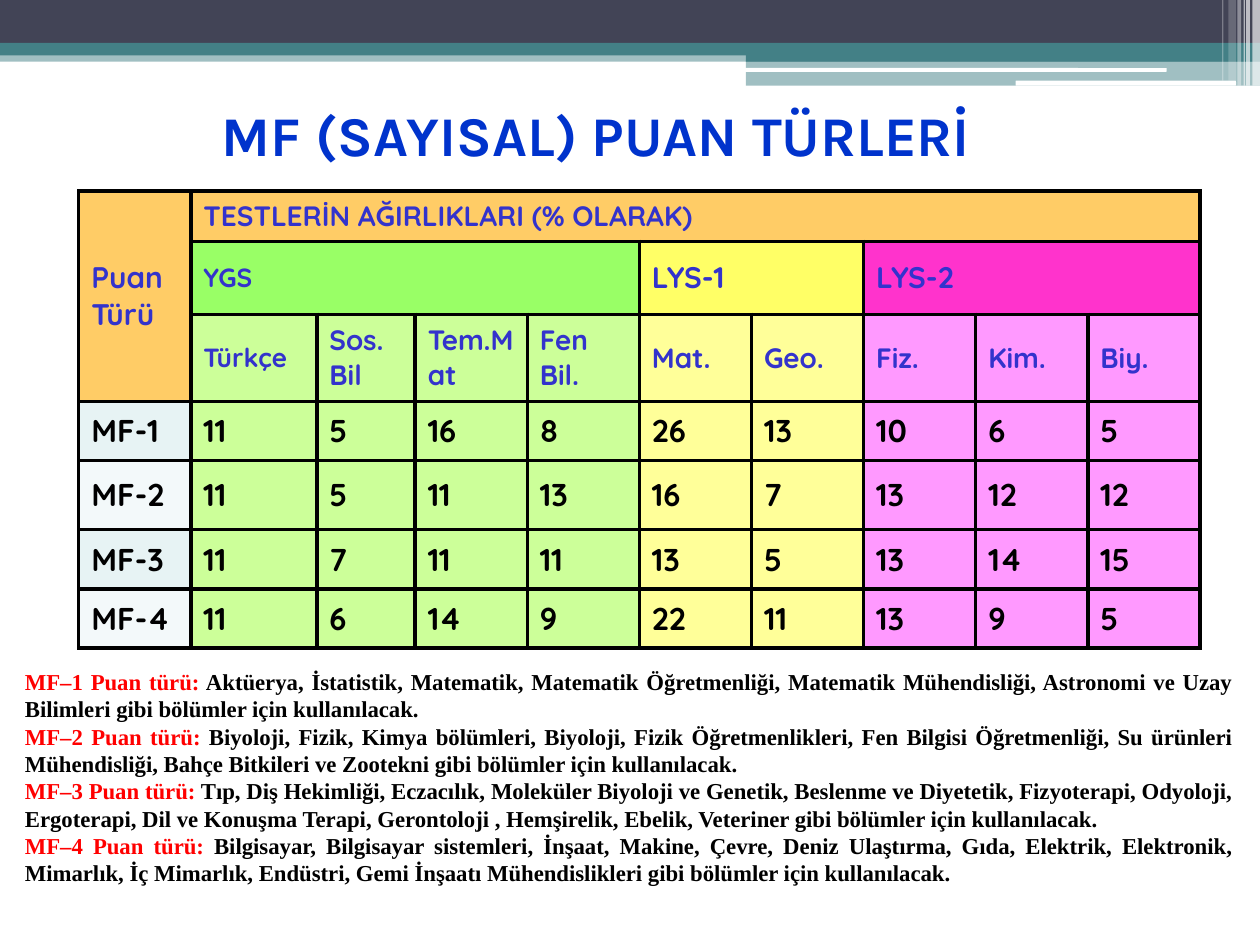
from dataclasses import dataclass

from lxml import etree
from pptx import Presentation, util as u
from pptx.dml.color import RGBColor
from pptx.enum import shapes, text
from pptx.oxml.ns import qn

COLUMNS, ROWS = 1000, 750


@dataclass(frozen=True)
class Theme:
    """Colours, fonts and type sizes of the slide."""
    white: str = "FFFFFF"
    black: str = "000000"
    navy: str = "424456"
    teal: str = "438086"
    title: str = "0033CC"
    heading: str = "3333CC"
    label: str = "FF0000"
    orange: str = "FFCC66"
    ygs: str = "99FF66"
    ygs_light: str = "CCFF99"
    lys1: str = "FFFF66"
    lys1_light: str = "FFFF99"
    lys2: str = "FF33CC"
    lys2_light: str = "FF99FF"
    bands: tuple = ("E7F3F4", "F3F9FA")
    title_font: str = "Karla"
    table_font: str = "Quicksand"
    note_font: str = "Times New Roman"
    title_size: float = 32
    score_size: float = 18
    group_size: float = 17
    head_size: float = 16
    small_size: float = 15
    note_size: float = 13
    border: float = 2.25


THEME = Theme()

BARS = [
    ((0, 40, 1000, 9), THEME.teal, 50),
    ((0, 0, 1000, 34), THEME.navy, 100),
    ((0, 34, 1000, 10), THEME.teal, 100),
    ((592, 39, 408, 10), THEME.teal, 100),
    ((592, 48, 408, 20), THEME.teal, 50),
]
PILLS = [(591, 54, 335, 3), (806, 64, 175, 4)]
STRIPES = [(994, 6, 68, 65), (989, 3, 68, 65), (987, 1, 68, 60),
           (982, 3, 68, 40), (975, 6, 64, 20), (970, 1, 64, 30)]

COLUMN_WIDTHS = [89, 100, 78] + [89] * 7
ROW_HEIGHTS = [40, 58, 69, 47, 55, 47, 47]
GROUPS = [
    ("YGS", 1, 4, THEME.ygs, THEME.small_size),
    ("LYS-1", 5, 6, THEME.lys1, THEME.group_size),
    ("LYS-2", 7, 9, THEME.lys2, THEME.group_size),
]
TESTS = ["Türkçe", "Sos.\nBil", "Tem.Mat", "Fen Bil.", "Mat.", "Geo.", "Fiz.", "Kim.", "Biy."]
TEST_FILLS = [THEME.ygs_light] * 4 + [THEME.lys1_light] * 2 + [THEME.lys2_light] * 3
SCORES = {
    "MF-1": [11, 5, 16, 8, 26, 13, 10, 6, 5],
    "MF-2": [11, 5, 11, 13, 16, 7, 13, 12, 12],
    "MF-3": [11, 7, 11, 11, 13, 5, 13, 14, 15],
    "MF-4": [11, 6, 14, 9, 22, 11, 13, 9, 5],
}
NOTES = [
    "Aktüerya, İstatistik, Matematik, Matematik Öğretmenliği, Matematik Mühendisliği, "
    "Astronomi ve Uzay Bilimleri gibi bölümler için kullanılacak.",
    "Biyoloji, Fizik, Kimya bölümleri, Biyoloji, Fizik Öğretmenlikleri, Fen Bilgisi "
    "Öğretmenliği, Su ürünleri Mühendisliği, Bahçe Bitkileri ve Zootekni gibi bölümler "
    "için kullanılacak.",
    "Tıp, Diş Hekimliği, Eczacılık, Moleküler Biyoloji ve Genetik, Beslenme ve Diyetetik, "
    "Fizyoterapi, Odyoloji, Ergoterapi, Dil ve Konuşma Terapi, Gerontoloji , Hemşirelik, "
    "Ebelik, Veteriner gibi bölümler için kullanılacak.",
    "Bilgisayar, Bilgisayar sistemleri, İnşaat, Makine, Çevre, Deniz Ulaştırma, Gıda, "
    "Elektrik, Elektronik, Mimarlık, İç Mimarlık, Endüstri, Gemi İnşaatı Mühendislikleri "
    "gibi bölümler için kullanılacak.",
]


def grid(left, top, width, height):
    """Turn grid columns and rows into slide lengths."""
    across, down = u.Inches(10) / COLUMNS, u.Inches(7.5) / ROWS
    return [round(n * step) for n, step in zip((left, top, width, height), (across, down) * 2)]


def write(para, content, *, font, size, color):
    """Add a bold span to a paragraph."""
    span = para.add_run()
    span.text = content
    span.font.name, span.font.size, span.font.bold = font, u.Pt(size), True
    span.font.color.rgb = RGBColor.from_string(color)


def add_block(page, area, color, opacity=100, kind=shapes.MSO_SHAPE.RECTANGLE):
    """Draw a borderless filled shape."""
    block = page.shapes.add_shape(kind, *grid(*area))
    block.shadow.inherit = False
    block.line.fill.background()
    block.fill.solid()
    block.fill.fore_color.rgb = RGBColor.from_string(color)
    if opacity < 100:
        tint = block.fill._xPr.find(".//" + qn("a:srgbClr"))
        etree.SubElement(tint, qn("a:alpha"), val=str(opacity * 1000))


def add_text_frame(page, area, anchor):
    """Add a wrapping text box and return its frame."""
    frame = page.shapes.add_textbox(*grid(*area)).text_frame
    frame.word_wrap = True
    frame.vertical_anchor = anchor
    return frame


def add_borders(cell):
    """Give a cell four solid borders."""
    properties = cell._tc.get_or_add_tcPr()
    for side in ("lnL", "lnR", "lnT", "lnB"):
        line = etree.SubElement(properties, qn("a:" + side), w=str(u.Pt(THEME.border)))
        fill = etree.SubElement(line, qn("a:solidFill"))
        etree.SubElement(fill, qn("a:srgbClr"), val=THEME.black)


def fill_cell(cell, content, fill, size, color=THEME.heading):
    """Write a cell's paragraphs and paint it."""
    cell.vertical_anchor = text.MSO_ANCHOR.MIDDLE
    cell.fill.solid()
    cell.fill.fore_color.rgb = RGBColor.from_string(fill)
    for index, line in enumerate(content.split("\n")):
        para = cell.text_frame.add_paragraph() if index else cell.text_frame.paragraphs[0]
        write(para, line, font=THEME.table_font, size=size, color=color)


def add_header_art(page):
    """Draw the bands and stripes along the top."""
    for area, color, opacity in BARS:
        add_block(page, area, color, opacity)
    for area in PILLS:
        add_block(page, area, THEME.white, kind=shapes.MSO_SHAPE.ROUNDED_RECTANGLE)
    for left, width, height, opacity in STRIPES:
        add_block(page, (left, 0, width, height), THEME.white, opacity)


def add_score_table(page):
    """Build the table of test weights."""
    area = grid(62.5, 151.5, sum(COLUMN_WIDTHS), sum(ROW_HEIGHTS))
    table = page.shapes.add_table(len(ROW_HEIGHTS), len(COLUMN_WIDTHS), *area).table
    for column, width in zip(table.columns, COLUMN_WIDTHS):
        column.width = grid(0, 0, width, 0)[2]
    for row, height in zip(table.rows, ROW_HEIGHTS):
        row.height = grid(0, 0, 0, height)[3]
    for cell in table.iter_cells():
        add_borders(cell)
    table.cell(0, 0).merge(table.cell(2, 0))
    table.cell(0, 1).merge(table.cell(0, 9))
    fill_cell(table.cell(0, 0), "Puan Türü", THEME.orange, THEME.group_size)
    fill_cell(table.cell(0, 1), "TESTLERİN AĞIRLIKLARI (% OLARAK)", THEME.orange, THEME.head_size)
    for name, first, last, fill, size in GROUPS:
        table.cell(1, first).merge(table.cell(1, last))
        fill_cell(table.cell(1, first), name, fill, size)
    for column, (test, fill) in enumerate(zip(TESTS, TEST_FILLS), 1):
        size = THEME.small_size if column == 1 else THEME.head_size
        fill_cell(table.cell(2, column), test, fill, size)
    for row, (name, scores) in enumerate(SCORES.items(), 3):
        fills = [THEME.bands[(row - 3) % 2]] + TEST_FILLS
        for column, (value, fill) in enumerate(zip([name] + scores, fills)):
            fill_cell(table.cell(row, column), str(value), fill, THEME.score_size, THEME.black)


def add_notes(page):
    """Explain each score type below the table."""
    frame = add_text_frame(page, (10, 525, 977, 185), text.MSO_ANCHOR.TOP)
    style = dict(font=THEME.note_font, size=THEME.note_size)
    for number, note in enumerate(NOTES, 1):
        para = frame.paragraphs[0] if number == 1 else frame.add_paragraph()
        para.alignment = text.PP_ALIGN.JUSTIFY
        write(para, f"MF–{number} Puan türü:", color=THEME.label, **style)
        write(para, " " + note, color=THEME.black, **style)


def main():
    """Build and save the slide."""
    deck = Presentation()
    deck.slide_width, deck.slide_height = u.Inches(10), u.Inches(7.5)
    page = deck.slides.add_slide(deck.slide_layouts[6])
    add_header_art(page)
    title = add_text_frame(page, (166, 44, 649, 125), text.MSO_ANCHOR.MIDDLE)
    write(title.paragraphs[0], "MF (SAYISAL) PUAN TÜRLERİ", font=THEME.title_font,
          size=THEME.title_size, color=THEME.title)
    add_score_table(page)
    add_notes(page)
    deck.save("out.pptx")


if __name__ == "__main__":
    main()
